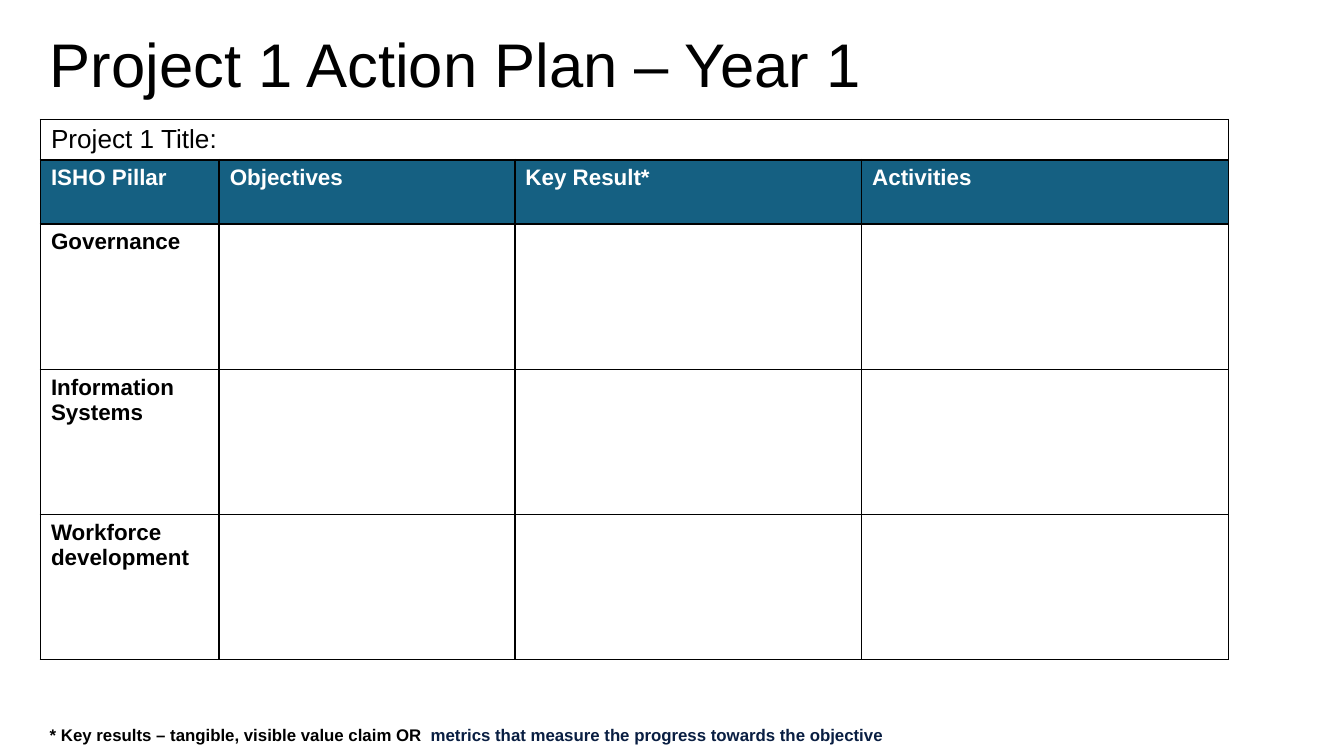
from dataclasses import dataclass

from lxml.etree import SubElement
from pptx import Presentation
from pptx.dml.color import RGBColor
from pptx.enum.text import MSO_ANCHOR, PP_ALIGN
from pptx.oxml.ns import qn
from pptx.util import Inches, Pt


@dataclass(frozen=True)
class Theme:
    font: str = "Arial"
    text: str = "000000"
    header_text: str = "FFFFFF"
    header_fill: str = "156082"
    note_accent: str = "091E42"
    border: str = "000000"
    border_width: float = 1
    title_size: float = 33
    caption_size: float = 14
    table_size: float = 12
    note_size: float = 9


THEME = Theme()
LEFT = 0.3
COLUMN_WIDTHS = [1.33, 2.2, 2.58, 2.73]
ROW_HEIGHTS = [0.21, 0.48, 1.08, 1.08, 1.08]
CAPTION = "Project 1 Title:"
HEADERS = ["ISHO Pillar", "Objectives", "Key Result*", "Activities"]
PILLARS = ["Governance", "Information Systems", "Workforce development"]


def add_text(paragraph, text, size, color=THEME.text, bold=False):
    """Append one formatted run to a paragraph."""
    run = paragraph.add_run()
    run.text = text
    run.font.name = THEME.font
    run.font.size = Pt(size)
    run.font.bold = bold
    run.font.color.rgb = RGBColor.from_string(color)


def set_margins(frame, side, end=0.04):
    frame.margin_left = frame.margin_right = Inches(side)
    frame.margin_top = frame.margin_bottom = Inches(end)


class SlideBuilder:
    def __init__(self, slide, theme):
        self.slide = slide
        self.theme = theme

    def title(self, text, left, top, width, height):
        shape = self.slide.shapes.title
        shape.left, shape.top = Inches(left), Inches(top)
        shape.width, shape.height = Inches(width), Inches(height)
        frame = shape.text_frame
        frame.word_wrap = True
        frame.vertical_anchor = MSO_ANCHOR.MIDDLE
        set_margins(frame, 0.07)
        paragraph = frame.paragraphs[0]
        paragraph.alignment = PP_ALIGN.LEFT
        paragraph.line_spacing = 0.9
        add_text(paragraph, text, self.theme.title_size)

    def border(self, cell):
        properties = cell._tc.get_or_add_tcPr()
        for side in ("lnL", "lnR", "lnT", "lnB"):
            line = SubElement(properties, qn(f"a:{side}"),
                              w=str(Pt(self.theme.border_width)))
            fill = SubElement(line, qn("a:solidFill"))
            SubElement(fill, qn("a:srgbClr"), val=self.theme.border)

    def cell(self, cell, text="", fill=None, **text_format):
        set_margins(cell, 0.08)
        self.border(cell)
        if fill:
            cell.fill.solid()
            cell.fill.fore_color.rgb = RGBColor.from_string(fill)
        else:
            cell.fill.background()
        paragraph = cell.text_frame.paragraphs[0]
        if text:
            add_text(paragraph, text, **text_format)
        else:
            paragraph.font.size = Pt(self.theme.table_size)

    def action_table(self, left, top, height):
        theme = self.theme
        frame = self.slide.shapes.add_table(
            len(ROW_HEIGHTS), len(COLUMN_WIDTHS), Inches(left), Inches(top),
            Inches(sum(COLUMN_WIDTHS)), Inches(height))
        table = frame.table
        for column, width in zip(table.columns, COLUMN_WIDTHS):
            column.width = Inches(width)
        for row, row_height in zip(table.rows, ROW_HEIGHTS):
            row.height = Inches(row_height)
        frame.height = Inches(height)

        # Caption across the whole table
        last = len(COLUMN_WIDTHS) - 1
        table.cell(0, 0).merge(table.cell(0, last))
        for column in range(last + 1):
            self.cell(table.cell(0, column), "" if column else CAPTION,
                      size=theme.caption_size)

        # Header row
        for column, header in enumerate(HEADERS):
            self.cell(table.cell(1, column), header, fill=theme.header_fill,
                      size=theme.table_size, color=theme.header_text, bold=True)

        # One row per pillar, with empty cells to fill in
        for row, pillar in enumerate(PILLARS, start=2):
            for column in range(last + 1):
                self.cell(table.cell(row, column), "" if column else pillar,
                          size=theme.table_size, bold=True)

    def note(self, parts, left, top, width, height):
        frame = self.slide.shapes.add_textbox(
            Inches(left), Inches(top), Inches(width), Inches(height)).text_frame
        frame.word_wrap = True
        set_margins(frame, 0.07)
        for text, color in parts:
            add_text(frame.paragraphs[0], text, self.theme.note_size,
                     color=color, bold=True)


def main():
    # Widescreen slide, 16 to 9
    presentation = Presentation()
    presentation.slide_width = Inches(10)
    presentation.slide_height = Inches(10) * 9 // 16
    slide = presentation.slides.add_slide(presentation.slide_layouts[5])
    builder = SlideBuilder(slide, THEME)

    builder.title("Project 1 Action Plan – Year 1", LEFT, -0.04, 8.62, 1.09)
    builder.action_table(LEFT, 0.89, 4.01)
    builder.note([
        ("* Key results – tangible, visible value claim OR  ", THEME.text),
        ("metrics that measure the progress towards the objective",
         THEME.note_accent),
    ], LEFT, 5.35, 8.25, 0.23)

    presentation.save("out.pptx")


if __name__ == "__main__":
    main()
